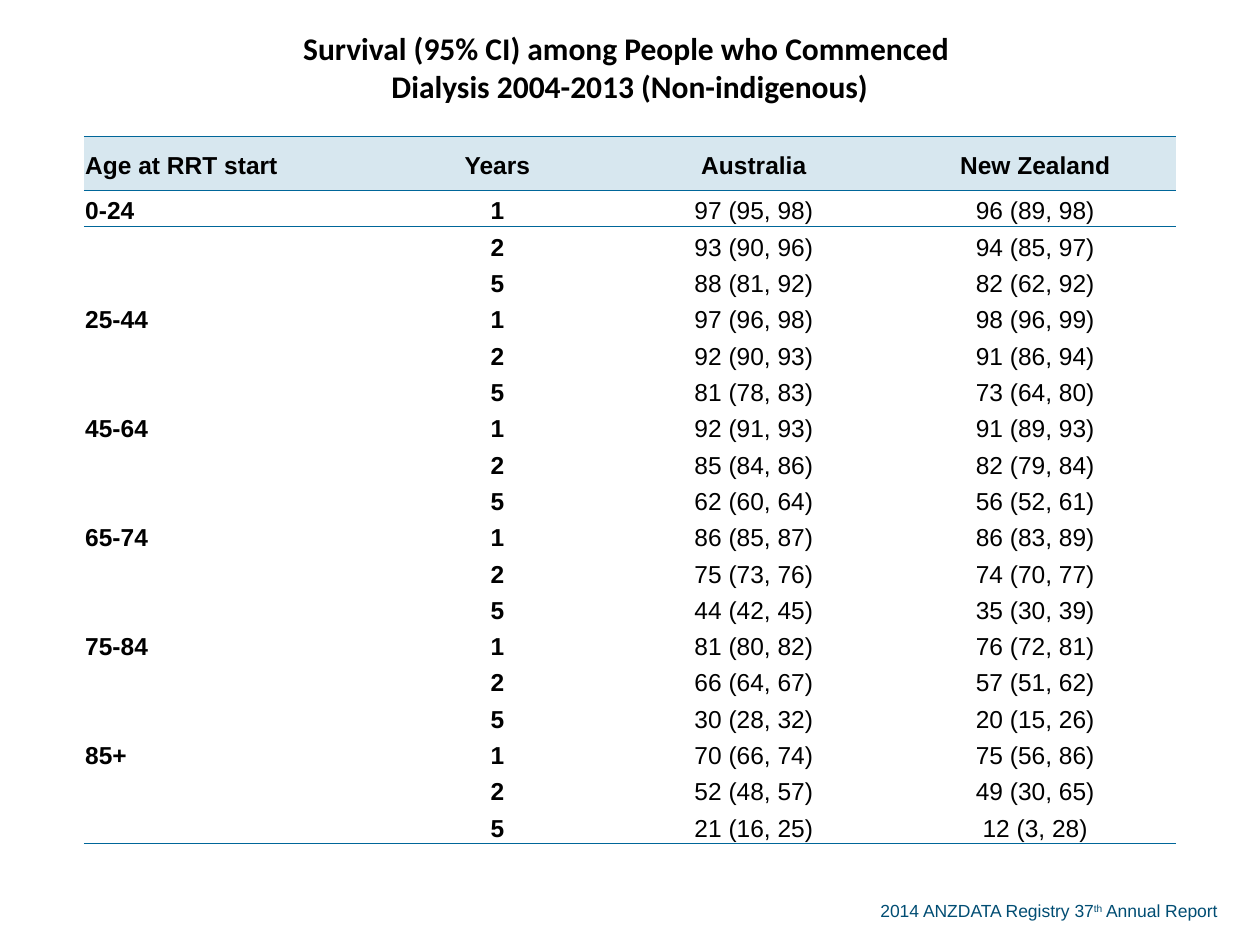
from dataclasses import dataclass

from lxml import etree
from pptx import Presentation
from pptx.dml.color import RGBColor
from pptx.enum.text import MSO_ANCHOR, PP_ALIGN
from pptx.oxml.ns import qn
from pptx.util import Pt

LEFT, CENTER = PP_ALIGN.LEFT, PP_ALIGN.CENTER
MIDDLE = MSO_ANCHOR.MIDDLE
NO_STYLE_NO_GRID = "{2D5ABB26-0587-4C30-8999-92F81FD0307C}"

TITLE = "Survival (95% CI) among People who Commenced \vDialysis 2004-2013 (Non-indigenous)"
HEADINGS = ["Age at RRT start", "Years", "Australia", "New Zealand"]
YEARS = ["1", "2", "5"]
# Age group: (Australia, New Zealand) survival for each of YEARS
SURVIVAL = {
    "0-24": [("97 (95, 98)", "96 (89, 98)"), ("93 (90, 96)", "94 (85, 97)"), ("88 (81, 92)", "82 (62, 92)")],
    "25-44": [("97 (96, 98)", "98 (96, 99)"), ("92 (90, 93)", "91 (86, 94)"), ("81 (78, 83)", "73 (64, 80)")],
    "45-64": [("92 (91, 93)", "91 (89, 93)"), ("85 (84, 86)", "82 (79, 84)"), ("62 (60, 64)", "56 (52, 61)")],
    "65-74": [("86 (85, 87)", "86 (83, 89)"), ("75 (73, 76)", "74 (70, 77)"), ("44 (42, 45)", "35 (30, 39)")],
    "75-84": [("81 (80, 82)", "76 (72, 81)"), ("66 (64, 67)", "57 (51, 62)"), ("30 (28, 32)", "20 (15, 26)")],
    "85+": [("70 (66, 74)", "75 (56, 86)"), ("52 (48, 57)", "49 (30, 65)"), ("21 (16, 25)", "12 (3, 28)")],
}
COLUMN_WIDTHS = [170, 132.4, 160.8, 160.8]
TITLE_HEIGHT, HEADING_HEIGHT, ROW_HEIGHT = 77.75, 30.85, 20.75


@dataclass(frozen=True)
class Theme:
    text: str = "000000"
    footer: str = "004D73"
    rule: str = "006699"
    heading_fill: str = "D7E7EF"
    title_font: str = "Calibri"
    body_font: str = "Arial"
    title_size: float = 18
    body_size: float = 14
    footer_size: float = 10
    rule_width: float = 0.5


class SlideBuilder:
    def __init__(self, slide, theme):
        self.slide = slide
        self.theme = theme

    def style(self, paragraph, name, size, color, bold=False):
        font = paragraph.font
        font.name, font.size, font.bold = name, Pt(size), bold
        font.color.rgb = RGBColor.from_string(color)

    def footer(self, left, top, width, height, pieces):
        """Pieces are (text, is_superscript) pairs."""
        frame = self.slide.shapes.add_textbox(Pt(left), Pt(top), Pt(width), Pt(height)).text_frame
        frame.word_wrap = False
        paragraph = frame.paragraphs[0]
        for text, is_superscript in pieces:
            run = paragraph.add_run()
            run.text = text
            if is_superscript:
                run._r.get_or_add_rPr().set("baseline", "30000")
        self.style(paragraph, self.theme.body_font, self.theme.footer_size, self.theme.footer)

    def table(self, left, top, column_widths, row_heights):
        shape = self.slide.shapes.add_table(
            len(row_heights), len(column_widths), Pt(left), Pt(top),
            Pt(sum(column_widths)), Pt(sum(row_heights)))
        table = shape.table
        table.first_row = table.horz_banding = False
        table._tbl.tblPr.find(qn("a:tableStyleId")).text = NO_STYLE_NO_GRID
        for column, width in zip(table.columns, column_widths):
            column.width = Pt(width)
        for row, height in zip(table.rows, row_heights):
            row.height = Pt(height)
        return table

    def rule(self, cell, side):
        """Draw a cell border; side is T or B."""
        line = etree.SubElement(cell._tc.get_or_add_tcPr(), qn(f"a:ln{side}"),
                                w=str(Pt(self.theme.rule_width)))
        fill = etree.SubElement(line, qn("a:solidFill"))
        etree.SubElement(fill, qn("a:srgbClr"), val=self.theme.rule)

    def cell(self, cell, text, align=CENTER, bold=False, sides="", fill=None):
        self.cell_frame(cell, sides, fill)
        paragraph = cell.text_frame.paragraphs[0]
        paragraph.text = text
        paragraph.alignment = align
        if text:
            paragraph.line_spacing = 1.19
            paragraph.space_after = Pt(14)
        self.style(paragraph, self.theme.body_font, self.theme.body_size, self.theme.text, bold)

    def title_cell(self, cell, text):
        self.cell_frame(cell, "B", None)
        paragraph = cell.text_frame.paragraphs[0]
        paragraph.text = text
        paragraph.alignment = CENTER
        self.style(paragraph, self.theme.title_font, self.theme.title_size, self.theme.text, True)

    def cell_frame(self, cell, sides, fill):
        cell.vertical_anchor = MIDDLE
        cell.margin_left = cell.margin_right = cell.margin_top = Pt(0.72)
        cell.margin_bottom = 0
        for side in sides:
            self.rule(cell, side)
        if fill:
            cell.fill.solid()
            cell.fill.fore_color.rgb = RGBColor.from_string(fill)
        else:
            cell.fill.background()


def main():
    presentation = Presentation()
    presentation.slide_width, presentation.slide_height = Pt(720), Pt(540)
    slide = presentation.slides.add_slide(presentation.slide_layouts[6])
    theme = Theme()
    builder = SlideBuilder(slide, theme)

    builder.footer(496, 511, 215.5, 19.5, [
        ("2014 ANZDATA Registry 37", False), ("th", True), (" Annual Report", False)])

    body = [(age if index == 0 else "", year, *rates)
            for age, group in SURVIVAL.items()
            for index, (year, rates) in enumerate(zip(YEARS, group))]
    table = builder.table(48, 0, COLUMN_WIDTHS,
                          [TITLE_HEIGHT, HEADING_HEIGHT] + [ROW_HEIGHT] * len(body))

    table.cell(0, 0).merge(table.cell(0, len(HEADINGS) - 1))
    builder.title_cell(table.cell(0, 0), TITLE)
    for column, heading in enumerate(HEADINGS):
        builder.cell(table.cell(1, column), heading, CENTER if column else LEFT,
                     True, "TB", theme.heading_fill)
    rules = {0: "T", len(body) - 1: "B"}
    for row, values in enumerate(body):
        for column, value in enumerate(values):
            builder.cell(table.cell(row + 2, column), value, CENTER if column else LEFT,
                         column < 2, rules.get(row, ""))

    presentation.save("out.pptx")


if __name__ == "__main__":
    main()
